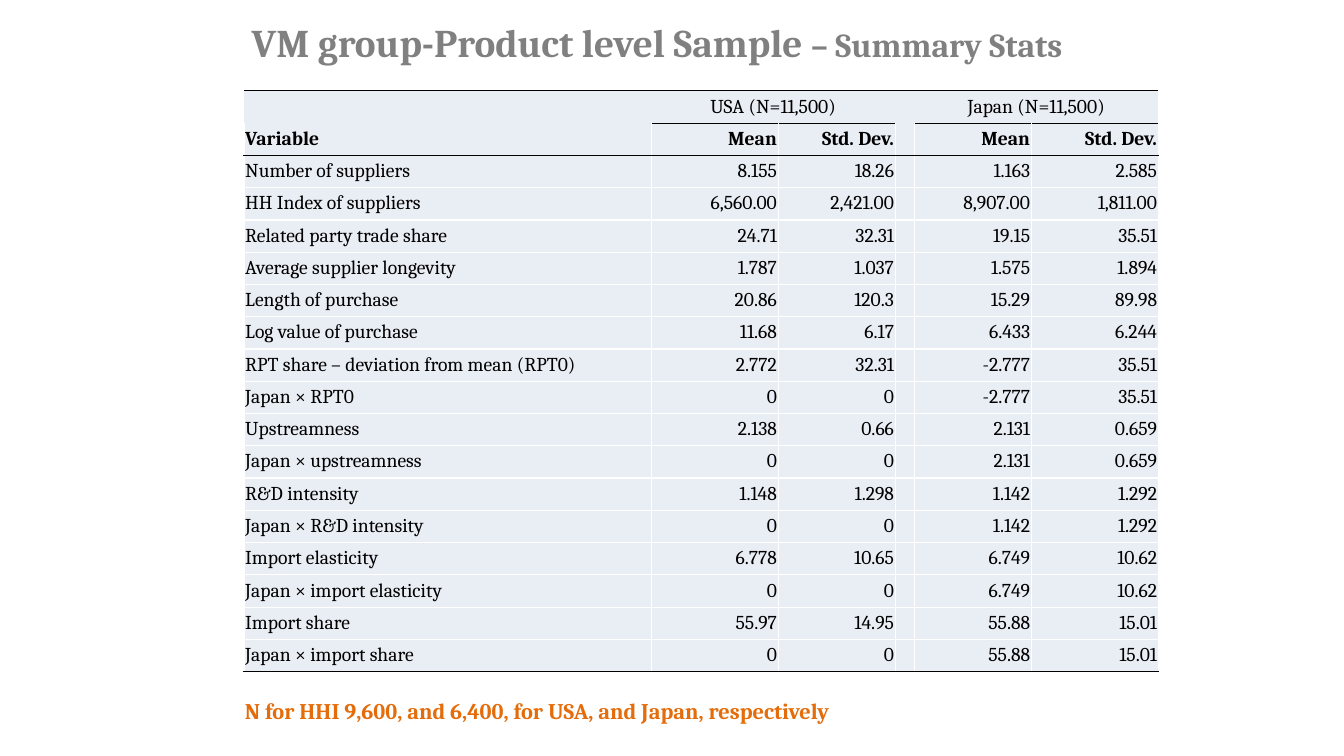
from lxml import etree
from pptx import Presentation, util as u
from pptx.dml.color import RGBColor
from pptx.enum import text
from pptx.oxml.ns import qn

FONT = "Cambria"
BLACK, WHITE, GRAY, ORANGE, PALE = "000000", "FFFFFF", "808080", "E46C0A", "E9EDF4"
LEFT, CENTER, RIGHT = text.PP_ALIGN.LEFT, text.PP_ALIGN.CENTER, text.PP_ALIGN.RIGHT
GAP = 3  # narrow column between the two countries
COL_WIDTHS = [10.26, 3.2, 2.95, 0.48, 2.95, 3.2]
TABLE_HEIGHT = u.Cm(14.64)
HEADINGS = ["Variable", "Mean", "Std. Dev.", "Mean", "Std. Dev."]
STATS = [
    ["Number of suppliers", "8.155", "18.26", "1.163", "2.585"],
    ["HH Index of suppliers", "6,560.00", "2,421.00", "8,907.00", "1,811.00"],
    ["Related party trade share", "24.71", "32.31", "19.15", "35.51"],
    ["Average supplier longevity", "1.787", "1.037", "1.575", "1.894"],
    ["Length of purchase", "20.86", "120.3", "15.29", "89.98"],
    ["Log value of purchase", "11.68", "6.17", "6.433", "6.244"],
    ["RPT share – deviation from mean (RPT0)", "2.772", "32.31", "-2.777", "35.51"],
    ["Japan × RPT0", "0", "0", "-2.777", "35.51"],
    ["Upstreamness", "2.138", "0.66", "2.131", "0.659"],
    ["Japan × upstreamness", "0", "0", "2.131", "0.659"],
    ["R&D intensity", "1.148", "1.298", "1.142", "1.292"],
    ["Japan × R&D intensity", "0", "0", "1.142", "1.292"],
    ["Import elasticity", "6.778", "10.65", "6.749", "10.62"],
    ["Japan × import elasticity", "0", "0", "6.749", "10.62"],
    ["Import share", "55.97", "14.95", "55.88", "15.01"],
    ["Japan × import share", "0", "0", "55.88", "15.01"],
]


def rgb(color):
    return RGBColor.from_string(color)


def style_run(r, size, color, bold):
    r.font.name, r.font.size, r.font.bold = FONT, u.Pt(size), bold
    r.font.color.rgb = rgb(color)


def add_text(s, left, top, parts, color, align, spacing, anchor):
    """One-line text box; parts are (wording, size) pairs."""
    sp = s.shapes.add_textbox(u.Cm(left), u.Cm(top), u.Cm(21.89), u.Cm(0.99))
    tf = sp.text_frame
    tf.word_wrap, tf.vertical_anchor = True, anchor
    p = tf.paragraphs[0]
    p.alignment, p.line_spacing = align, spacing
    for wording, size in parts:
        r = p.add_run()
        r.text = wording
        style_run(r, size, color, True)


def rule_color(edge, col, last):
    """Colour of a horizontal rule; edge 0 is the top of the table."""
    if edge in (0, 2, last):
        return BLACK
    if edge == 1:
        return None if col in (0, GAP) else BLACK
    return WHITE


def set_borders(cell, colors):
    """Colours in the order left, right, top, bottom; None draws no line."""
    tcPr = cell._tc.get_or_add_tcPr()
    for i, (side, color) in enumerate(zip("LRTB", colors)):
        ln = etree.Element(qn(f"a:ln{side}"), w=str(u.Pt(1)))
        if color:
            fill = etree.SubElement(ln, qn("a:solidFill"))
            etree.SubElement(fill, qn("a:srgbClr"), val=color)
        else:
            etree.SubElement(ln, qn("a:noFill"))
        tcPr.insert(i, ln)


def fill_cell(cell, wording, align, bold):
    cell.text = wording
    cell.margin_left = cell.margin_right = cell.margin_top = u.Cm(0.03)
    cell.margin_bottom = 0
    cell.vertical_anchor = text.MSO_ANCHOR.MIDDLE
    cell.fill.solid()
    cell.fill.fore_color.rgb = rgb(PALE)
    p = cell.text_frame.paragraphs[0]
    p.alignment, p.line_spacing = align, 0.8
    for r in p.runs:
        style_run(r, 14, BLACK, bold)


def add_stats_table(s, left, top):
    groups = ["", "USA (N=11,500)", "", "", "Japan (N=11,500)", ""]
    rows = [groups] + [row[:GAP] + [""] + row[GAP:] for row in [HEADINGS] + STATS]
    last = len(rows)
    tbl = s.shapes.add_table(last, len(COL_WIDTHS), u.Cm(left), u.Cm(top),
                             u.Cm(sum(COL_WIDTHS)), TABLE_HEIGHT).table
    tbl.first_row = tbl.horz_banding = False
    for column, width in zip(tbl.columns, COL_WIDTHS):
        column.width = u.Cm(width)
    for i, row in enumerate(rows):
        tbl.rows[i].height = TABLE_HEIGHT // last
        side = WHITE if i else None
        for j, wording in enumerate(row):
            align = CENTER if i == 0 else RIGHT if j else LEFT
            cell = tbl.cell(i, j)
            fill_cell(cell, wording, align, i == 1)
            set_borders(cell, [side, side, rule_color(i, j, last),
                               rule_color(i + 1, j, last)])
    # Country headings span their two columns
    for j in (1, GAP + 1):
        tbl.cell(0, j).merge(tbl.cell(0, j + 1))


def main():
    prs = Presentation()
    prs.slide_width, prs.slide_height = u.Cm(33.87), u.Cm(19.05)
    s = prs.slides.add_slide(prs.slide_layouts[6])
    # Title
    add_text(s, 5.72, 0.79, [("VM group-Product level Sample ", 28),
                             ("– Summary Stats", 24), (" ", 28)],
             GRAY, CENTER, 0.9, text.MSO_ANCHOR.BOTTOM)
    # Summary statistics
    add_stats_table(s, 6.15, 2.29)
    # Note on sample size
    add_text(s, 5.92, 17.58,
             [("N for HHI 9,600, and 6,400, for USA, and Japan, respectively", 16)],
             ORANGE, LEFT, 0.8, text.MSO_ANCHOR.TOP)
    prs.save("out.pptx")


if __name__ == "__main__":
    main()
